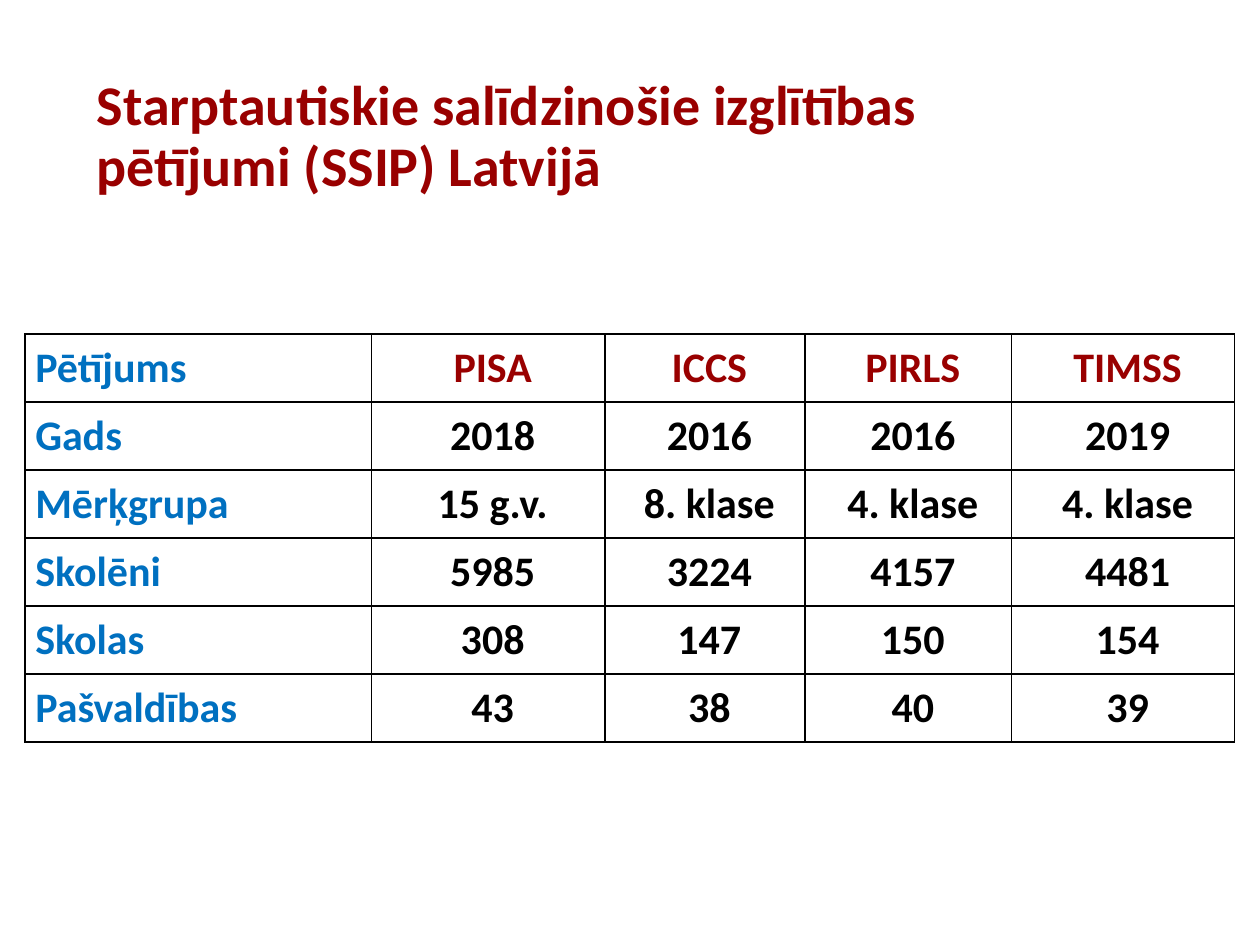
"""Build a slide with a table of international comparative education studies in Latvia."""
import lxml.etree
import pptx
import pptx.dml.color
import pptx.enum.text
import pptx.oxml.ns
import pptx.util

Inches = pptx.util.Inches
Pt = pptx.util.Pt
MIDDLE = pptx.enum.text.MSO_ANCHOR.MIDDLE
ALIGN = pptx.enum.text.PP_ALIGN
qn = pptx.oxml.ns.qn

COLORS = {"heading": "990000", "label": "0070C0", "value": "000000", "border": "000000"}
FONT = "Calibri"
TITLE = "Starptautiskie salīdzinošie izglītības pētījumi (SSIP) Latvijā"
STUDIES = [
    ["Pētījums", "PISA", "ICCS", "PIRLS", "TIMSS"],
    ["Gads", "2018", "2016", "2016", "2019"],
    ["Mērķgrupa", "15 g.v.", "8. klase", "4. klase", "4. klase"],
    ["Skolēni", "5985", "3224", "4157", "4481"],
    ["Skolas", "308", "147", "150", "154"],
    ["Pašvaldības", "43", "38", "40", "39"],
]
COLUMN_WIDTHS = [2.75, 1.85, 1.59, 1.64, 1.77]
ROW_HEIGHT = 0.54


def style_paragraph(paragraph, size, color, align=ALIGN.LEFT):
    """Apply the bold slide font to a paragraph."""
    paragraph.alignment = align
    font = paragraph.font
    font.name = FONT
    font.size = Pt(size)
    font.bold = True
    font.color.rgb = pptx.dml.color.RGBColor.from_string(COLORS[color])


def add_title(slide):
    """Add the slide title."""
    title = slide.shapes.add_textbox(Inches(0.67), Inches(0.44), Inches(7.95), Inches(1.31))
    frame = title.text_frame
    frame.word_wrap = True
    frame.vertical_anchor = MIDDLE
    frame.text = TITLE
    frame.paragraphs[0].line_spacing = 0.9
    style_paragraph(frame.paragraphs[0], 32, "heading")


def add_borders(cell):
    """Draw a thin line on all four sides of a cell."""
    properties = cell._tc.get_or_add_tcPr()
    for side in ("a:lnL", "a:lnR", "a:lnT", "a:lnB"):
        line = lxml.etree.SubElement(properties, qn(side), w=str(Pt(1)))
        fill = lxml.etree.SubElement(line, qn("a:solidFill"))
        lxml.etree.SubElement(fill, qn("a:srgbClr"), val=COLORS["border"])


def fill_cell(cell, text, color, align):
    """Write and format one table cell."""
    add_borders(cell)
    cell.fill.background()
    cell.vertical_anchor = MIDDLE
    cell.margin_left = Inches(0.08)
    cell.margin_top = cell.margin_right = Inches(0.01)
    cell.margin_bottom = 0
    cell.text = text
    style_paragraph(cell.text_frame.paragraphs[0], 24, color, align)


def add_studies_table(slide):
    """Add the table with one study per column."""
    studies = slide.shapes.add_table(
        len(STUDIES), len(COLUMN_WIDTHS), Inches(0.2), Inches(2.65),
        Inches(sum(COLUMN_WIDTHS)), Inches(ROW_HEIGHT * len(STUDIES))).table
    studies.first_row = False
    studies.horz_banding = False
    for column, width in zip(studies.columns, COLUMN_WIDTHS):
        column.width = Inches(width)
    for r, values in enumerate(STUDIES):
        studies.rows[r].height = Inches(ROW_HEIGHT)
        for c, text in enumerate(values):
            color = "label" if c == 0 else "heading" if r == 0 else "value"
            align = ALIGN.LEFT if c == 0 else ALIGN.CENTER
            fill_cell(studies.cell(r, c), text, color, align)


def main():
    """Create and save the presentation."""
    presentation = pptx.Presentation()
    presentation.slide_width = Inches(10)
    presentation.slide_height = Inches(7.5)
    slide = presentation.slides.add_slide(presentation.slide_layouts[6])
    add_title(slide)
    add_studies_table(slide)
    presentation.save("out.pptx")


if __name__ == "__main__":
    main()
